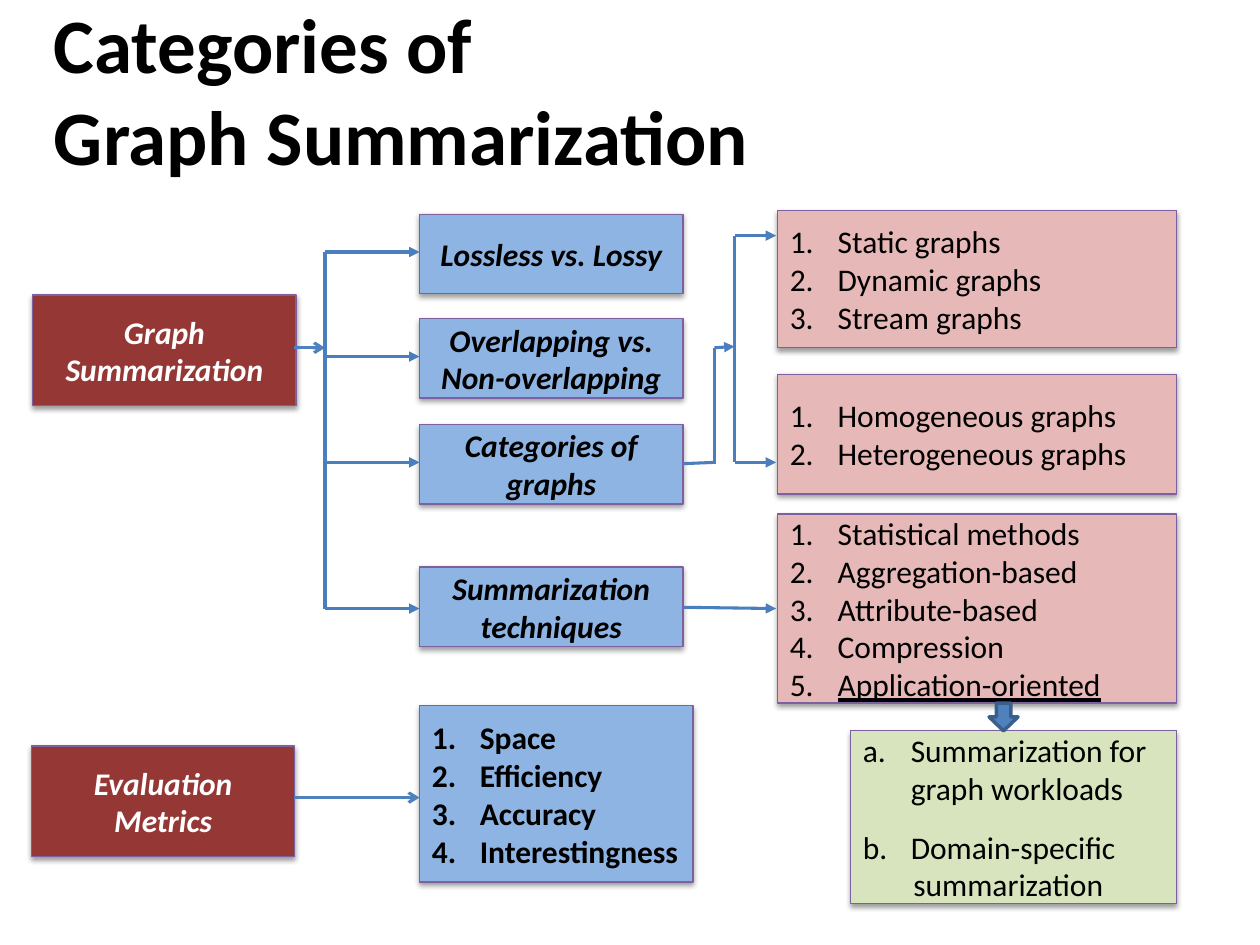
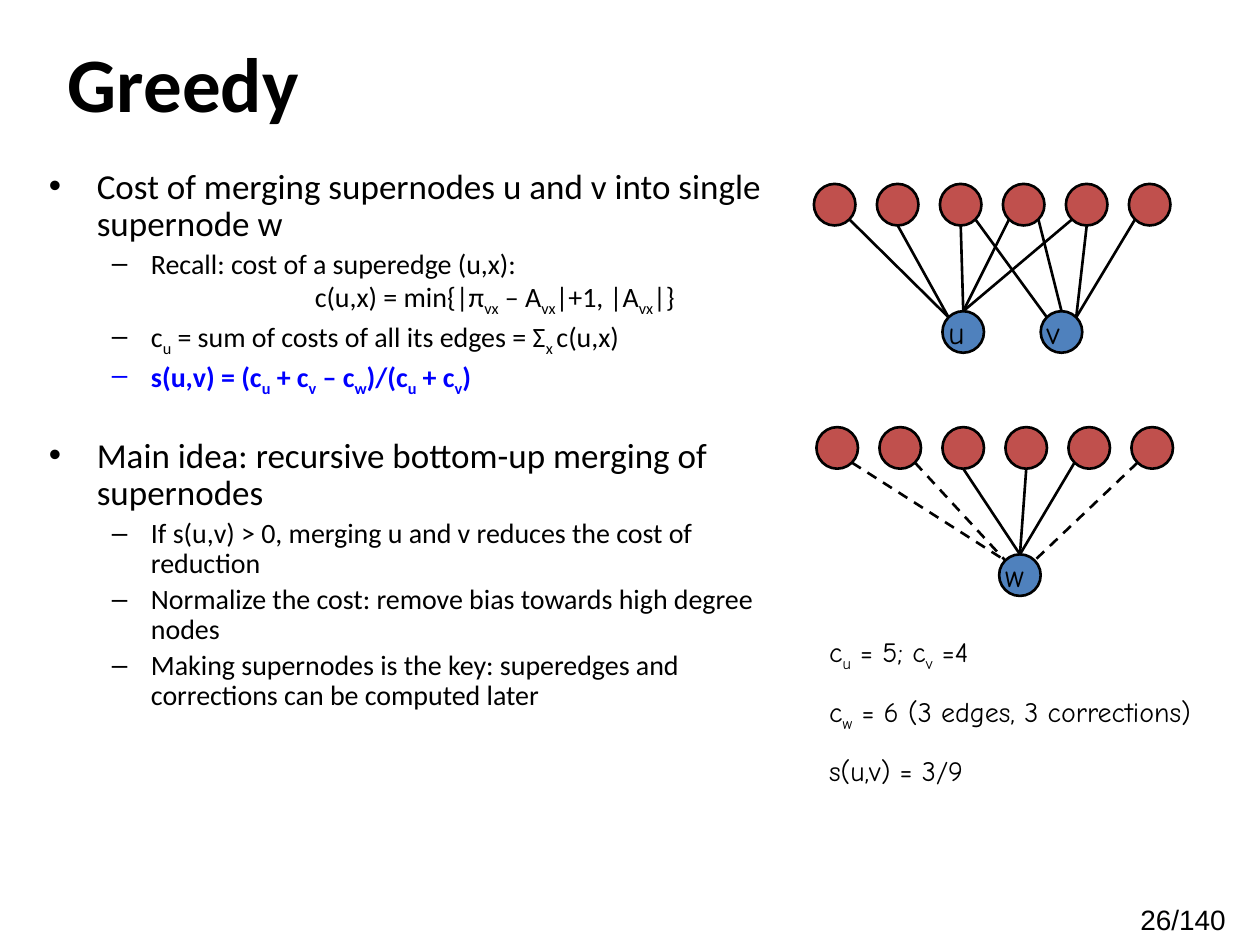
from dataclasses import dataclass
from math import cos, radians, sin

from lxml.etree import SubElement
from pptx import Presentation
from pptx.dml.color import RGBColor
from pptx.enum.dml import MSO_LINE
from pptx.enum.shapes import MSO_CONNECTOR, MSO_SHAPE
from pptx.enum.text import MSO_ANCHOR, PP_ALIGN
from pptx.oxml.ns import qn
from pptx.util import Inches, Pt

# Shared look
BLACK, WHITE, FORMULA_BLUE = "000000", "FFFFFF", "0000FF"
DARK_RED, PALE_BLUE, PINK, PALE_GREEN = "953735", "8EB4E3", "E6B9B8", "D7E4BD"
BOX_EDGE, BRANCH_BLUE, BLUE, ARROW_EDGE = "7D60A0", "4B7EBC", "4F81BD", "3A5F8C"
NODE_RED = "C0504D"
BODY_FONT, NOTE_FONT, PAGE_FONT = "Calibri", "Comic Neue", "Arial"
NODE_SIZE = 0.33


@dataclass
class Box:
    left: float
    top: float
    width: float
    height: float
    fill: str
    lines: tuple[str, ...]
    numbering: str = ""
    color: str = BLACK
    bold: bool = False
    italic: bool = False


@dataclass
class Line:
    x1: float
    y1: float
    x2: float
    y2: float
    head: str = ""
    color: str = BRANCH_BLUE
    width: float = 1.75
    dashed: bool = False


@dataclass
class Node:
    left: float
    top: float
    fill: str = NODE_RED
    label: str = ""

    def rim(self, side: str) -> tuple[float, float]:
        """Point on the circle in a compass direction."""
        angle = radians({"N": 270, "NE": 315, "SE": 45, "S": 90, "SW": 135, "NW": 225}[side])
        radius = NODE_SIZE / 2
        return (self.left + radius * (1 + cos(angle)), self.top + radius * (1 + sin(angle)))


@dataclass
class Edge:
    start: Node
    start_side: str
    end: Node
    end_side: str
    dashed: bool = False


def rgb(color: str) -> RGBColor:
    return RGBColor.from_string(color)


def write(frame, text: str, *, size: float = 18, font: str = BODY_FONT, color: str = BLACK,
          bold: bool = False, italic: bool = False, underline: bool = False,
          align=PP_ALIGN.LEFT, bullet: str = "", numbering: str = "",
          indent: float = 0, hanging: float = 0, before: float = 0,
          after: float = 0, spacing: float = 1) -> None:
    """Add one paragraph; parts between tildes become subscripts."""
    paragraph = frame.paragraphs[0]
    if paragraph.runs:
        paragraph = frame.add_paragraph()
    paragraph.alignment = align
    paragraph.space_before, paragraph.space_after = Pt(before), Pt(after)
    paragraph.line_spacing = spacing
    properties = paragraph._p.get_or_add_pPr()
    properties.set("marL", str(Inches(indent)))
    properties.set("indent", str(Inches(-hanging)))
    if numbering:
        SubElement(properties, qn("a:buAutoNum"), type=numbering)
    elif bullet:
        SubElement(properties, qn("a:buFont"), typeface="Arial")
        SubElement(properties, qn("a:buChar"), char=bullet)
    else:
        SubElement(properties, qn("a:buNone"))
    for index, part in enumerate(text.split("~")):
        if not part:
            continue
        run = paragraph.add_run()
        run.text = part
        run.font.size, run.font.name = Pt(size), font
        run.font.bold, run.font.italic, run.font.underline = bold, italic, underline
        run.font.color.rgb = rgb(color)
        if index % 2:
            run.font._element.set("baseline", "-25000")


def text_area(slide, left: float, top: float, width: float, height: float, *,
              anchor=MSO_ANCHOR.TOP, wrap: bool = True, margins: bool = True):
    area = slide.shapes.add_textbox(Inches(left), Inches(top), Inches(width), Inches(height))
    return set_frame(area.text_frame, anchor, wrap, margins)


def set_frame(frame, anchor, wrap: bool, margins: bool):
    frame.vertical_anchor, frame.word_wrap = anchor, wrap
    if not margins:
        frame.margin_left = frame.margin_right = frame.margin_top = frame.margin_bottom = 0
    return frame


def add_title(slide, lines: tuple[str, ...], left: float, top: float,
              width: float, height: float, align=PP_ALIGN.LEFT) -> None:
    frame = text_area(slide, left, top, width, height, anchor=MSO_ANCHOR.MIDDLE)
    for line in lines:
        write(frame, line, size=44, bold=True, align=align)


def draw_shape(slide, kind, left: float, top: float, width: float, height: float,
               fill: str, edge: str, edge_width: float):
    shape = slide.shapes.add_shape(kind, Inches(left), Inches(top), Inches(width), Inches(height))
    shape.shadow.inherit = False
    shape.fill.solid()
    shape.fill.fore_color.rgb = rgb(fill)
    shape.line.color.rgb = rgb(edge)
    shape.line.width = Pt(edge_width)
    return shape


def draw_box(slide, box: Box):
    shape = draw_shape(slide, MSO_SHAPE.RECTANGLE, box.left, box.top, box.width, box.height,
                       box.fill, BOX_EDGE, 0.75)
    # Soft shadow straight below
    effects = shape._element.spPr.find(qn("a:effectLst"))
    shadow = SubElement(effects, qn("a:outerShdw"), blurRad=str(Pt(3.1)), dist=str(Pt(1.6)),
                        dir="5400000", rotWithShape="0")
    shade = SubElement(shadow, qn("a:srgbClr"), val=BLACK)
    SubElement(shade, qn("a:alpha"), val="38000")
    frame = set_frame(shape.text_frame, MSO_ANCHOR.MIDDLE, True, True)
    hang = 0.38 if box.numbering else 0
    for line in box.lines:
        write(frame, line, color=box.color, bold=box.bold, italic=box.italic,
              underline=line == "Application-oriented",
              align=PP_ALIGN.LEFT if box.numbering else PP_ALIGN.CENTER,
              numbering=box.numbering, indent=hang, hanging=hang)
    return frame


def draw_line(slide, line: Line) -> None:
    connector = slide.shapes.add_connector(
        MSO_CONNECTOR.STRAIGHT, Inches(line.x1), Inches(line.y1), Inches(line.x2), Inches(line.y2))
    connector.line.color.rgb = rgb(line.color)
    connector.line.width = Pt(line.width)
    if line.dashed:
        connector.line.dash_style = MSO_LINE.DASH
    if line.head:
        SubElement(connector.line._get_or_add_ln(), qn("a:tailEnd"), type=line.head)
    SubElement(connector._element.spPr, qn("a:effectLst"))


def draw_node(slide, node: Node) -> None:
    circle = draw_shape(slide, MSO_SHAPE.OVAL, node.left, node.top, NODE_SIZE, NODE_SIZE,
                        node.fill, BLACK, 1.5)
    if node.label:
        frame = set_frame(circle.text_frame, MSO_ANCHOR.MIDDLE, False, False)
        write(frame, node.label, font=NOTE_FONT)


def draw_graph(slide, nodes: list[Node], edges: list[Edge]) -> None:
    for node in nodes:
        draw_node(slide, node)
    for edge in edges:
        draw_line(slide, Line(*edge.start.rim(edge.start_side), *edge.end.rim(edge.end_side),
                              color=BLACK, width=1.5, dashed=edge.dashed))


def categories_slide(slide) -> None:
    add_title(slide, ("Categories of", "Graph Summarization"), 0.33, 0.33, 8.58, 0.75)

    # Topics and their aspects
    for left, top, topic in ((0.26, 2.34, "Graph Summarization"), (0.25, 5.92, "Evaluation Metrics")):
        draw_box(slide, Box(left, top, 2.09, 0.88, DARK_RED, (topic,), color=WHITE,
                            bold=True, italic=True))
    aspects = ((1.7, "Lossless vs. Lossy"), (2.53, "Overlapping vs. Non-overlapping"),
               (3.37, "Categories of graphs"), (4.5, "Summarization techniques"))
    for top, aspect in aspects:
        draw_box(slide, Box(3.33, top, 2.09, 0.63, PALE_BLUE, (aspect,), bold=True, italic=True))

    # Numbered lists
    number = "arabicPeriod"
    lists = (
        Box(6.17, 1.67, 3.17, 1.09, PINK, ("Static graphs", "Dynamic graphs", "Stream graphs"), number),
        Box(6.17, 2.97, 3.17, 0.95, PINK, ("Homogeneous graphs", "Heterogeneous graphs"), number),
        Box(6.17, 4.08, 3.17, 1.5, PINK, ("Statistical methods", "Aggregation-based", "Attribute-based",
                                         "Compression", "Application-oriented"), number),
        Box(3.33, 5.6, 2.17, 1.4, PALE_BLUE, ("Space", "Efficiency", "Accuracy", "Interestingness"),
            number, bold=True),
    )
    for box in lists:
        draw_box(slide, box)
    letter = "alphaLcPeriod"
    applications = draw_box(slide, Box(6.75, 5.8, 2.59, 1.37, PALE_GREEN,
                                       ("Summarization for graph workloads",), letter))
    write(applications, "Domain-specific", numbering=letter, indent=0.38, hanging=0.38, before=12)
    write(applications, "summarization", indent=0.4)
    draw_shape(slide, MSO_SHAPE.DOWN_ARROW, 7.85, 5.58, 0.23, 0.22, BLUE, ARROW_EDGE, 2)

    # Branches
    trunk, fork = 2.58, 5.83
    lines = [
        Line(2.33, 2.76, trunk, 2.76, "arrow", BLUE),
        Line(2.33, 6.33, 3.33, 6.33, "arrow", BLUE),
        Line(trunk, 2, trunk, 4.83, width=2),
        Line(fork, 1.87, fork, 3.67, width=2),
        Line(5.42, 4.82, 6.16, 4.83, "triangle"),
        Line(5.42, 3.68, 5.67, 3.67),
        Line(5.67, 3.68, 5.67, 2.76),
        Line(5.67, 2.76, fork, 2.75, "triangle"),
    ]
    lines += [Line(trunk, y, 3.33, y, "triangle") for y in (2, 2.83, 3.67, 4.83)]
    lines += [Line(fork, y, 6.16, y, "triangle") for y in (1.87, 3.67)]
    for line in lines:
        draw_line(slide, line)


def greedy_slide(slide) -> None:
    add_title(slide, ("Greedy",), 0, 0.02, 2.91, 1.25, PP_ALIGN.CENTER)

    # Two supernodes before the merge
    u, v = Node(7.48, 2.47, BLUE, "u"), Node(8.26, 2.47, BLUE, "v")
    upper = [Node(6.46 + 0.5 * i, 1.46) for i in range(6)]
    links = ((0, "SE", u, "NW"), (1, "S", u, "NW"), (2, "S", u, "N"), (3, "SW", u, "N"),
             (4, "SW", u, "N"), (2, "SE", v, "NW"), (3, "SE", v, "N"), (4, "S", v, "NE"),
             (5, "SW", v, "NE"))
    draw_graph(slide, upper + [u, v], [Edge(upper[i], *link) for i, *link in links])

    # Merged supernode, corrections dashed
    w = Node(7.93, 4.4, BLUE, "w")
    lower = [Node(6.48 + 0.5 * i, 3.39) for i in range(6)]
    merged = (("SE", "NW"), ("SE", "NW"), ("S", "N"), ("S", "N"), ("SW", "N"), ("SW", "NE"))
    draw_graph(slide, lower + [w], [Edge(node, start, w, end, dashed=end != "N")
                                    for node, (start, end) in zip(lower, merged)])

    # Worked costs
    costs = text_area(slide, 6.58, 5.04, 3.15, 1.06, wrap=False, margins=False)
    for cost in ("c~u~ = 5; c~v~ =4", "c~w~ = 6 (3 edges, 3 corrections)", "s(u,v) = 3/9"):
        write(costs, cost, size=16, font=NOTE_FONT, after=12)

    # Explanation
    body = text_area(slide, 0.29, 1.29, 6.06, 5.28)
    point = dict(size=20, bullet="•", indent=0.38, hanging=0.38, spacing=0.9)
    detail = dict(size=16, bullet="–", indent=0.81, hanging=0.31, spacing=0.9, before=3.2)
    write(body, "Cost of merging supernodes u and v into single supernode w", **point)
    write(body, "Recall: cost of a superedge (u,x):", **detail)
    write(body, "c(u,x) = min{|π~vx~ – A~vx~|+1, |A~vx~|}", size=16, indent=2.11, spacing=0.9)
    write(body, "c~u~ = sum of costs of all its edges = Σ~x ~c(u,x)", **detail)
    write(body, "s(u,v) = (c~u~ + c~v~ – c~w~)/(c~u~ + c~v~)", color=FORMULA_BLUE, bold=True, **detail)
    write(body, "Main idea: recursive bottom-up merging of supernodes", before=24.8, **point)
    for step in ("If s(u,v) > 0, merging u and v reduces the cost of reduction",
                 "Normalize the cost: remove bias towards high degree nodes",
                 "Making supernodes is the key: superedges and corrections can be computed later"):
        write(body, step, **detail)

    # Page number
    page = text_area(slide, 8.81, 7.11, 1.16, 0.39)
    write(page, "26/140", size=16, font=PAGE_FONT, align=PP_ALIGN.CENTER)


def main() -> None:
    deck = Presentation()
    deck.slide_width, deck.slide_height = Inches(10), Inches(7.5)
    for build in (categories_slide, greedy_slide):
        build(deck.slides.add_slide(deck.slide_layouts[6]))
    deck.save("out.pptx")


if __name__ == "__main__":
    main()
